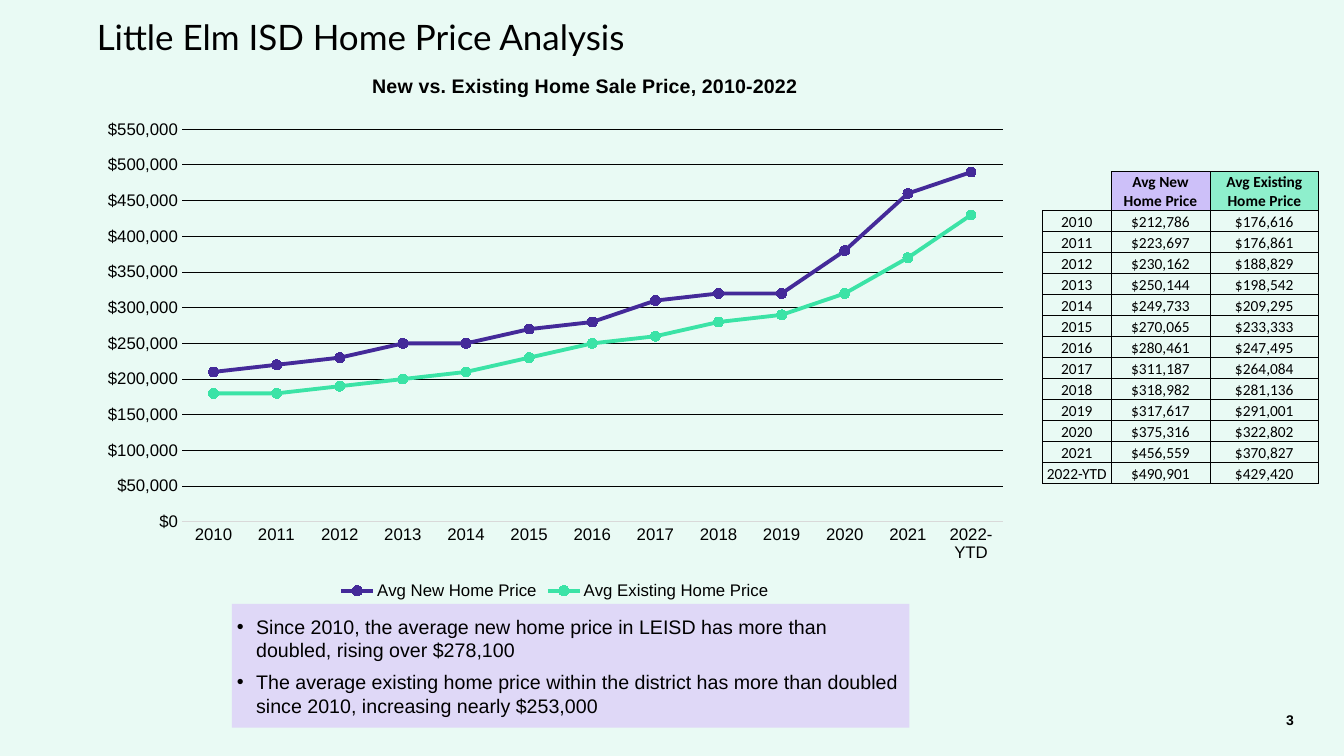
"""Build the Little Elm ISD home price slide with its chart and table."""
from lxml.etree import SubElement
from pptx import Presentation
from pptx.chart.data import CategoryChartData
from pptx.dml.color import RGBColor
from pptx.enum.chart import XL_CHART_TYPE as CT, XL_LEGEND_POSITION as LP
from pptx.enum.chart import XL_MARKER_STYLE as MS, XL_TICK_MARK as TM
from pptx.enum.shapes import MSO_SHAPE as SH
from pptx.enum.text import MSO_ANCHOR as MA, MSO_AUTO_SIZE as AS, PP_ALIGN as AL
from pptx.oxml import parse_xml
from pptx.oxml.ns import nsdecls, qn
from pptx.util import Inches, Pt


def rgb(value):
    return RGBColor.from_string(value)


def style(font, **values):
    font.color.rgb = rgb("000000")
    for name, value in values.items():
        setattr(font, name, value)


MINT = "E9FAF4"
PRICES = [
    ("2010", 212786, 176616),
    ("2011", 223697, 176861),
    ("2012", 230162, 188829),
    ("2013", 250144, 198542),
    ("2014", 249733, 209295),
    ("2015", 270065, 233333),
    ("2016", 280461, 247495),
    ("2017", 311187, 264084),
    ("2018", 318982, 281136),
    ("2019", 317617, 291001),
    ("2020", 375316, 322802),
    ("2021", 456559, 370827),
    ("2022-YTD", 490901, 429420),
]
SERIES = [("Avg New Home Price", "442A99", "CDC0F9"),
          ("Avg Existing Home Price", "3BE3A6", "8EEFCC")]
POINTS = [
    "Since 2010, the average new home price in LEISD has more than doubled, "
    "rising over $278,100",
    "The average existing home price within the district has more than doubled "
    "since 2010, increasing nearly $253,000",
]

prs = Presentation()
prs.slide_width, prs.slide_height = Inches(13.33), Inches(7.5)
s = prs.slides.add_slide(prs.slide_layouts[5])
s.background.fill.solid()
s.background.fill.fore_color.rgb = rgb(MINT)

title = s.shapes.title
title.left, title.top = Inches(0.96), Inches(0.15)
title.width, title.height = Inches(6.65), Inches(0.85)
tf = title.text_frame
frame = dict(margin_left=0, margin_top=0, margin_right=0, margin_bottom=0,
             vertical_anchor=MA.TOP, auto_size=AS.NONE, word_wrap=True)
for name, value in frame.items():
    setattr(tf, name, value)
p = tf.paragraphs[0]
p.alignment = AL.LEFT
r = p.add_run()
r.text = "Little Elm ISD Home Price Analysis"
style(r.font, name="Lato", size=Pt(25))

data = CategoryChartData(number_format='"$"#,##0')
data.categories = [row[0] for row in PRICES]
for i, (name, _, _) in enumerate(SERIES, 1):
    data.add_series(name, [round(row[i], -4) for row in PRICES])
chart = s.shapes.add_chart(CT.LINE_MARKERS, Inches(0.88), Inches(0.58),
                           Inches(9.25), Inches(5.41), data).chart
style(chart.font, name="Arial", size=Pt(12))
chart.has_title = True
p = chart.chart_title.text_frame.paragraphs[0]
r = p.add_run()
r.text = "New vs. Existing Home Sale Price, 2010-2022"
style(r.font, name="Arial", size=Pt(14), bold=True)
chart.has_legend = True
chart.legend.position = LP.BOTTOM
chart.legend.include_in_layout = False
style(chart.legend.font, name="Arial", size=Pt(12))

cat, val = chart.category_axis, chart.value_axis
for axis in (cat, val):
    axis.major_tick_mark = axis.minor_tick_mark = TM.NONE
    style(axis.tick_labels.font, name="Arial", size=Pt(12))
cat.format.line.color.rgb = rgb("D9D9D9")
cat.format.line.width = Pt(0.75)
val.format.line.fill.background()
val.minimum_scale, val.maximum_scale, val.major_unit = 0, 550000, 50000
val.tick_labels.number_format = '"$"#,##0'
val.tick_labels.number_format_is_linked = False
grid = val.major_gridlines.format.line
grid.color.rgb = rgb("000000")
grid.width = Pt(0.75)

plot = chart.plots[0]
plot.vary_by_categories = False
for ser, (_, color, _) in zip(plot.series, SERIES):
    ser.smooth = False
    ser.format.line.color.rgb = rgb(color)
    ser.format.line.width = Pt(2.75)
    ser.marker.style, ser.marker.size = MS.CIRCLE, 7
    ser.marker.format.fill.solid()
    ser.marker.format.fill.fore_color.rgb = rgb(color)
    ser.marker.format.line.color.rgb = rgb(color)

space = chart.element.chart
places = [
    (space.find(qn("c:title")), 1,
     dict(xMode="edge", yMode="edge", x=0.3, y=0.02)),
    (space.plotArea, 0,
     dict(layoutTarget="inner", xMode="edge", yMode="edge",
          x=0.1, y=0.13, w=0.88, h=0.72)),
]
for el, index, values in places:
    for old in el.findall(qn("c:layout")):
        el.remove(old)
    layout = parse_xml(f"<c:layout {nsdecls('c')}><c:manualLayout/></c:layout>")
    for name, value in values.items():
        SubElement(layout[0], qn(f"c:{name}")).set("val", str(value))
    el.insert(index, layout)

table = s.shapes.add_table(len(PRICES) + 1, 3, Inches(10.34), Inches(1.7),
                           Inches(2.74), Inches(3.1)).table
table.first_row = table.horz_banding = False
for col, width in zip(table.columns, (0.68, 0.98, 1.08)):
    col.width = Inches(width)
rows = [("", SERIES[0][0], SERIES[1][0])]
rows += [(year, f"${new:,}", f"${old:,}") for year, new, old in PRICES]
for i, texts in enumerate(rows):
    table.rows[i].height = Inches(2.71 / len(PRICES) if i else 0.39)
    for j, text in enumerate(texts):
        cell = table.cell(i, j)
        cell.vertical_anchor = MA.BOTTOM
        cell.margin_left = cell.margin_right = cell.margin_top = Inches(0.01)
        cell.margin_bottom = 0
        for side in "LRTB":
            ln = SubElement(cell._tc.get_or_add_tcPr(), qn(f"a:ln{side}"),
                            w=str(Pt(0.5)))
            if text or side in "RB":
                fill = SubElement(ln, qn("a:solidFill"))
                SubElement(fill, qn("a:srgbClr"), val="000000")
            else:
                SubElement(ln, qn("a:noFill"))
        if not text:
            cell.fill.background()
            continue
        cell.fill.solid()
        cell.fill.fore_color.rgb = rgb(MINT if i else SERIES[j - 1][2])
        p = cell.text_frame.paragraphs[0]
        p.alignment = AL.CENTER
        r = p.add_run()
        r.text = text
        style(r.font, name="Calibri", size=Pt(11), bold=i == 0)

box = s.shapes.add_shape(SH.RECTANGLE, Inches(2.3), Inches(5.99),
                         Inches(6.72), Inches(1.23))
box.shadow.inherit = False
box.fill.solid()
box.fill.fore_color.rgb = rgb("DFD8F7")
box.line.fill.background()
tf = box.text_frame
frame = dict(margin_left=Inches(0.05), margin_top=Inches(0.02),
             margin_right=Inches(0.05), margin_bottom=Inches(0.02),
             vertical_anchor=MA.MIDDLE, word_wrap=True)
for name, value in frame.items():
    setattr(tf, name, value)
for i, text in enumerate(POINTS):
    p = tf.add_paragraph() if i else tf.paragraphs[0]
    p.alignment = AL.LEFT
    p.space_after = Pt(6)
    pPr = p._p.get_or_add_pPr()
    pPr.set("marL", str(Inches(0.19)))
    pPr.set("indent", str(-Inches(0.19)))
    SubElement(pPr, qn("a:buFont"), typeface="Arial")
    SubElement(pPr, qn("a:buChar"), char="•")
    r = p.add_run()
    r.text = text
    style(r.font, name="Arial", size=Pt(14))

number = s.shapes.add_textbox(Inches(9.93), Inches(6.94), Inches(3), Inches(0.4))
tf = number.text_frame
tf.word_wrap = True
tf.vertical_anchor = MA.MIDDLE
p = tf.paragraphs[0]
p.alignment = AL.RIGHT
r = p.add_run()
r.text = "3"
style(r.font, name="Arial", size=Pt(10), bold=True)

prs.save("out.pptx")
